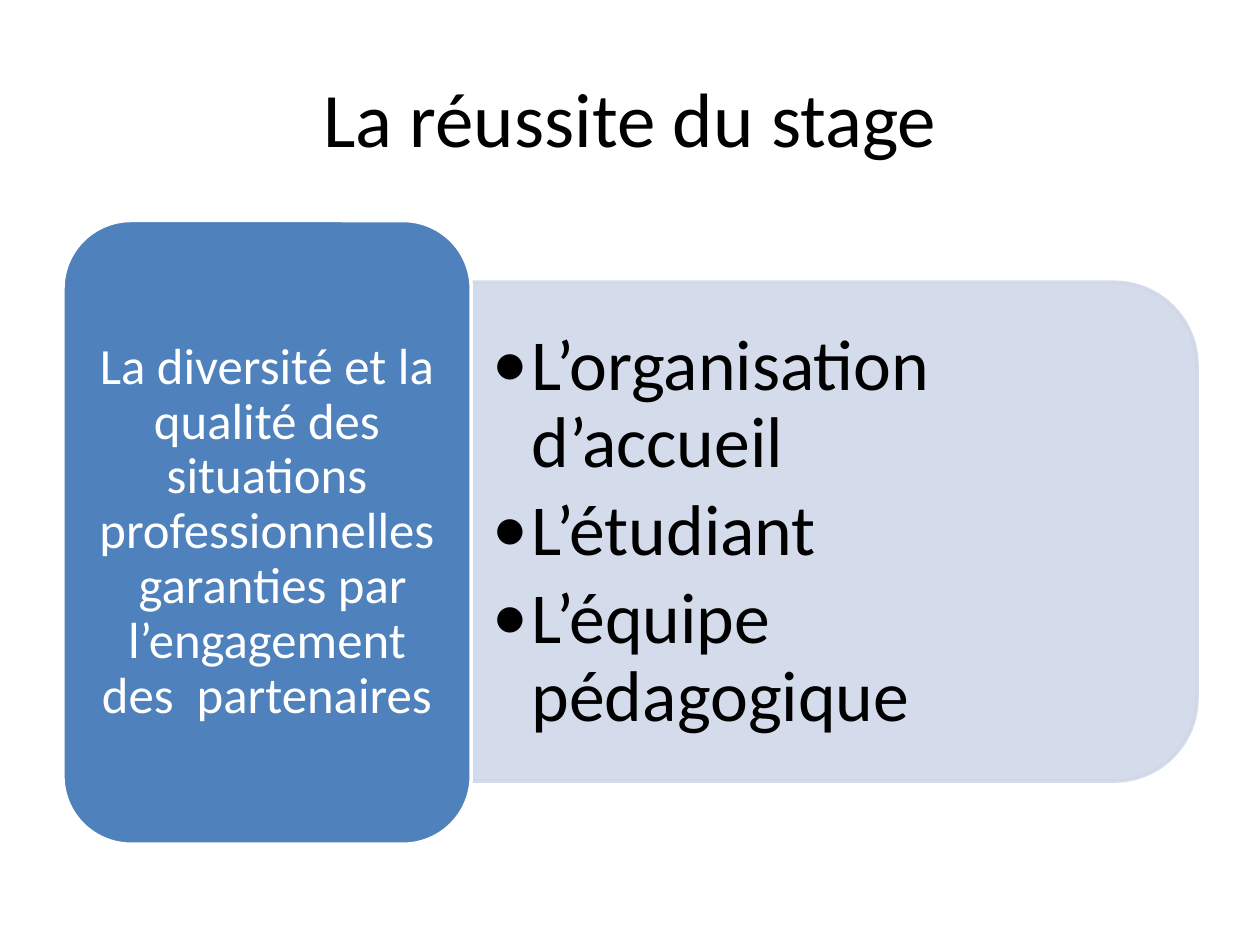
"""Build the slide on what makes an internship succeed."""
from dataclasses import dataclass

from lxml import etree
from pptx import Presentation
from pptx.dml.color import RGBColor
from pptx.enum.shapes import MSO_SHAPE
from pptx.enum.text import MSO_ANCHOR, PP_ALIGN
from pptx.oxml.ns import qn
from pptx.shapes.autoshape import Shape
from pptx.slide import Slide
from pptx.text.text import TextFrame
from pptx.util import Inches, Pt

ROUNDED = MSO_SHAPE.ROUNDED_RECTANGLE
ROUNDED_TOP = MSO_SHAPE.ROUND_2_SAME_RECTANGLE
MIDDLE = MSO_ANCHOR.MIDDLE
CENTER = PP_ALIGN.CENTER
LEFT = PP_ALIGN.LEFT


@dataclass(frozen=True)
class Theme:
    """Colours and type sizes of the slide."""
    font: str = "Calibri"
    ink: str = "000000"
    white: str = "FFFFFF"
    accent: str = "4F81BD"
    pale: str = "D0D8E8"
    title_size: float = 44
    partner_size: float = 41
    claim_size: float = 29
    outline: float = 2


@dataclass(frozen=True)
class Box:
    """A place on the slide, in inches."""
    left: float
    top: float
    width: float
    height: float

    def lengths(self) -> tuple:
        """Return left, top, width and height as lengths."""
        return tuple(Inches(v) for v in (self.left, self.top, self.width, self.height))


@dataclass(frozen=True)
class Panel:
    """A filled outline of the diagram."""
    preset: MSO_SHAPE
    box: Box
    fill: str
    line: str
    rotation: float = 0
    opacity: int = 100


@dataclass(frozen=True)
class Wording:
    """Paragraphs that share one format."""
    paragraphs: tuple
    size: float
    color: str
    align: PP_ALIGN = CENTER
    line_spacing: float = 1.0
    space_after: float = 0
    inset_x: float = 0.1
    inset_y: float = 0.05
    bullet_indent: float = 0


THEME = Theme()
TITLE_BOX = Box(0.5, 0.3, 9, 1.25)
PARTNERS_BOX = Box(3.74, 2.44, 5.57, 3.57)
PARTNERS_PANEL = Panel(ROUNDED_TOP, Box(4.64, 1.34, 3.96, 5.76), THEME.pale,
                       THEME.pale, rotation=90, opacity=90)
CLAIM_PANEL = Panel(ROUNDED, Box(0.5, 1.75, 3.24, 4.95), THEME.accent, THEME.white)

TITLE = Wording(("La réussite du stage",), THEME.title_size, THEME.ink)
PARTNERS = Wording(
    ("L’organisation d’accueil", "L’étudiant", "L’équipe pédagogique"),
    THEME.partner_size, THEME.ink, LEFT, line_spacing=0.9, space_after=6,
    inset_x=0.17, inset_y=0.09, bullet_indent=0.31)
CLAIM = Wording(
    ("La diversité et la qualité des situations professionnelles  garanties par "
     "l’engagement des  partenaires",),
    THEME.claim_size, THEME.white, line_spacing=0.9, inset_x=0.12, inset_y=0.06)


def write(frame: TextFrame, wording: Wording) -> None:
    """Fill a text frame and format its paragraphs."""
    frame.text = "\n".join(wording.paragraphs)
    frame.word_wrap = True
    frame.vertical_anchor = MIDDLE
    frame.margin_left = frame.margin_right = Inches(wording.inset_x)
    frame.margin_top = frame.margin_bottom = Inches(wording.inset_y)
    for paragraph in frame.paragraphs:
        paragraph.alignment = wording.align
        paragraph.line_spacing = wording.line_spacing
        paragraph.space_after = Pt(wording.space_after)
        for run in paragraph.runs:
            run.font.name = THEME.font
            run.font.size = Pt(wording.size)
            run.font.color.rgb = RGBColor.from_string(wording.color)
        if wording.bullet_indent:
            properties = paragraph._p.get_or_add_pPr()
            indent = Inches(wording.bullet_indent)
            properties.set("marL", str(indent))
            properties.set("indent", str(-indent))
            etree.SubElement(properties, qn("a:buFont"), typeface=THEME.font)
            etree.SubElement(properties, qn("a:buChar"), char="•")


def draw_panel(slide: Slide, panel: Panel) -> Shape:
    """Draw a panel and return its shape."""
    shape = slide.shapes.add_shape(panel.preset, *panel.box.lengths())
    shape.rotation = panel.rotation
    shape.shadow.inherit = False
    shape.fill.solid()
    shape.fill.fore_color.rgb = RGBColor.from_string(panel.fill)
    shape.line.color.rgb = RGBColor.from_string(panel.line)
    shape.line.width = Pt(THEME.outline)
    if panel.opacity < 100:
        for color in shape._element.spPr.iter(qn("a:srgbClr")):
            etree.SubElement(color, qn("a:alpha"), val=str(panel.opacity * 1000))
    return shape


def main() -> None:
    """Build and save the presentation."""
    presentation = Presentation()
    presentation.slide_width, presentation.slide_height = Inches(10), Inches(7.5)
    slide = presentation.slides.add_slide(presentation.slide_layouts[5])

    title = slide.shapes.title
    title.left, title.top, title.width, title.height = TITLE_BOX.lengths()
    write(title.text_frame, TITLE)

    draw_panel(slide, PARTNERS_PANEL)
    partners = slide.shapes.add_textbox(*PARTNERS_BOX.lengths())
    write(partners.text_frame, PARTNERS)
    claim = draw_panel(slide, CLAIM_PANEL)
    write(claim.text_frame, CLAIM)

    presentation.save("out.pptx")


if __name__ == "__main__":
    main()
